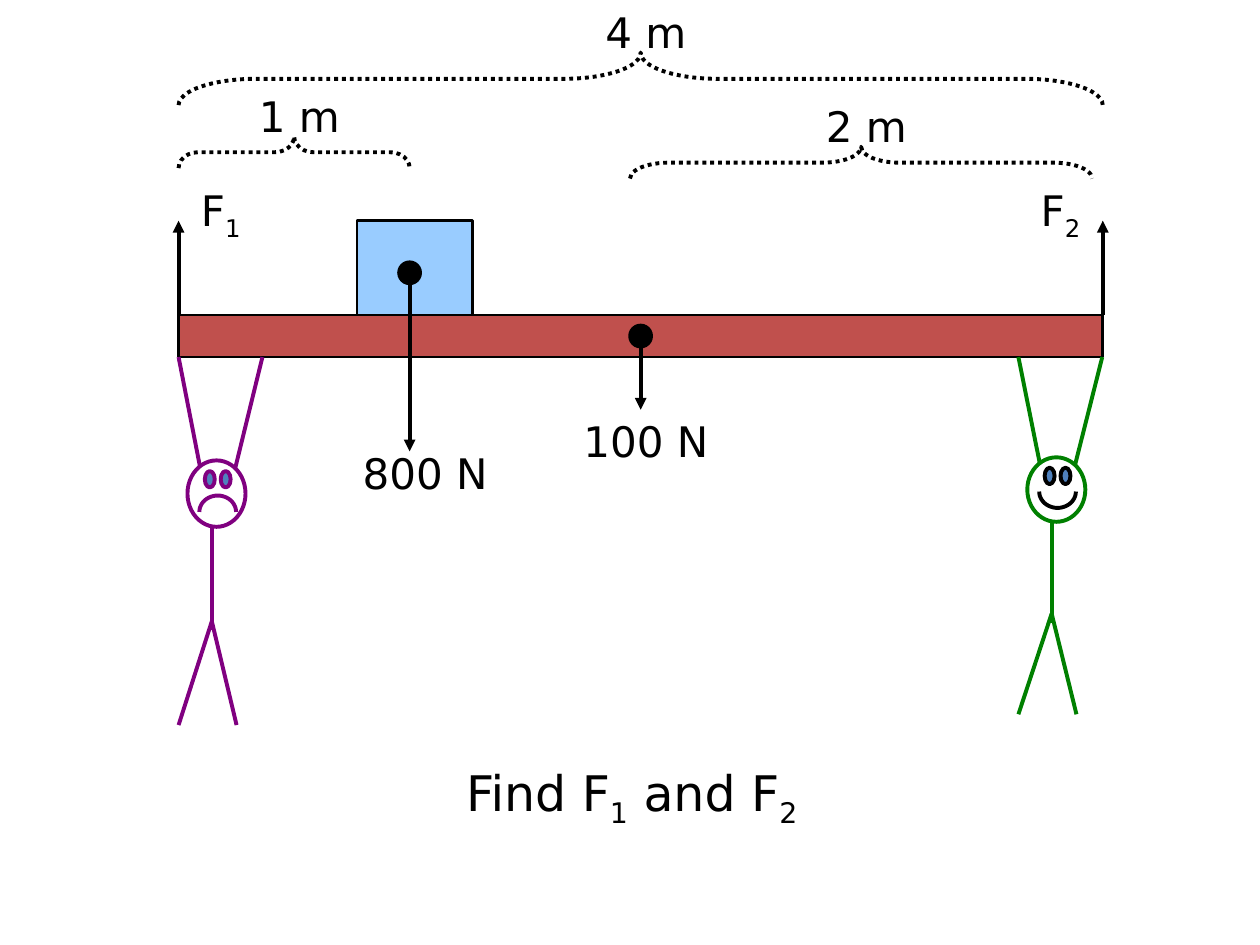
import math
from dataclasses import dataclass

import lxml.etree
import pptx
import pptx.dml.color
import pptx.enum.dml
import pptx.enum.shapes
import pptx.enum.text
import pptx.oxml.ns
import pptx.util

Cm = pptx.util.Cm
Kind = pptx.enum.shapes.MSO_SHAPE
qn = pptx.oxml.ns.qn

COLORS = {
    "black": "000000", "white": "FFFFFF", "beam": "C0504D", "load": "99CCFF",
    "eye": "4F81BD", "sad": "800080", "glad": "008000",
}
FONT = "DejaVu Sans"
LEFT, TOP, SPAN, DEPTH = 3.6, 6.35, 18.63, 0.85
RIGHT, BASE, MID = LEFT + SPAN, TOP + DEPTH, LEFT + SPAN / 2
LOAD_X = LEFT + SPAN / 4


@dataclass
class Label:
    words: tuple
    left: float
    top: float
    width: float
    height: float = 1.27
    size: int = 24


@dataclass
class Brace:
    left: float
    top: float
    span: float
    depth: float


@dataclass
class Arrow:
    x: float
    start: float
    end: float


@dataclass
class Person:
    left: float
    scale: float
    body: str
    face: str
    smile: bool


LABELS = [
    Label(("F", "1"), 1.91, 3.6, 5.08),
    Label(("F", "2"), 18.84, 3.6, 5.08),
    Label(("100 N",), 11.22, 8.26, 3.6),
    Label(("800 N",), 6.77, 8.89, 3.6),
    Label(("4 m",), 9.74, 0, 6.56),
    Label(("1 m",), 3.6, 1.69, 4.87),
    Label(("2 m",), 15.03, 1.91, 4.87),
    Label(("Find F", "1", " and F", "2"), 2.15, 15.24, 21.17, 1.45, 28),
]
BRACES = [
    Brace(LEFT, 1.06, SPAN, 1.06),
    Brace(12.7, 2.96, SPAN / 2, 0.64),
    Brace(LEFT, 2.75, SPAN / 4, 0.64),
]
ARROWS = [
    Arrow(LEFT, TOP, 4.45),
    Arrow(RIGHT, TOP, 4.45),
    Arrow(MID, 6.98, 8.26),
    Arrow(LOAD_X, 5.5, 9.1),
]
PEOPLE = [
    Person(20.53, 1, "glad", "black", True),
    Person(LEFT, 1.03, "sad", "sad", False),
]
LIMBS = [
    ((0, 0), (0.67, 3.33)),
    ((0.85, 3.33), (1.69, 0)),
    ((0.67, 3.33), (0.67, 5.35)),
    ((0.67, 5.17), (0, 7.2)),
    ((0.67, 5.17), (1.17, 7.2)),
]


def rgb(name: str) -> pptx.dml.color.RGBColor:
    return pptx.dml.color.RGBColor.from_string(COLORS[name])


def style(shape, fill: str | None, line: str, width: float = 2.25) -> None:
    shape.shadow.inherit = False
    if fill:
        shape.fill.solid()
        shape.fill.fore_color.rgb = rgb(fill)
    else:
        shape.fill.background()
    shape.line.color.rgb = rgb(line)
    shape.line.width = pptx.util.Pt(width)


def add_form(shapes, kind, left: float, top: float, width: float, height: float,
             fill: str | None, line: str, weight: float = 2.25):
    shape = shapes.add_shape(kind, Cm(left), Cm(top), Cm(width), Cm(height))
    style(shape, fill, line, weight)
    return shape


def add_line(shapes, start: tuple, end: tuple, color: str):
    line = shapes.add_connector(
        pptx.enum.shapes.MSO_CONNECTOR.STRAIGHT, *map(Cm, start + end))
    line.line.color.rgb = rgb(color)
    line.line.width = pptx.util.Pt(2.25)
    lxml.etree.SubElement(line._element.spPr, qn("a:effectLst"))
    return line


def add_arrow(shapes, arrow: Arrow) -> None:
    line = add_line(shapes, (arrow.x, arrow.start), (arrow.x, arrow.end), "black")
    stroke = line._element.spPr.find(qn("a:ln"))
    lxml.etree.SubElement(stroke, qn("a:tailEnd"), type="triangle")


def add_dot(shapes, x: float, y: float) -> None:
    size = 0.42
    add_form(shapes, Kind.OVAL, x - size / 2, y - size / 2, size, size,
             "black", "black")


def add_brace(shapes, brace: Brace) -> None:
    shape = add_form(
        shapes, Kind.LEFT_BRACE,
        brace.left + (brace.span - brace.depth) / 2,
        brace.top + (brace.depth - brace.span) / 2,
        brace.depth, brace.span, None, "black")
    shape.rotation = 90
    shape.adjustments[0] = brace.span / brace.depth / 12
    shape.line.dash_style = pptx.enum.dml.MSO_LINE.ROUND_DOT


def add_label(shapes, label: Label) -> None:
    box = shapes.add_textbox(
        Cm(label.left), Cm(label.top), Cm(label.width), Cm(label.height))
    frame = box.text_frame
    frame.word_wrap = True
    frame.auto_size = pptx.enum.text.MSO_AUTO_SIZE.SHAPE_TO_FIT_TEXT
    para = frame.paragraphs[0]
    para.alignment = pptx.enum.text.PP_ALIGN.CENTER
    para.font.name = FONT
    para.font.size = pptx.util.Pt(label.size)
    para.font.color.rgb = rgb("black")
    for place, word in enumerate(label.words):
        run = para.add_run()
        run.text = word
        if place % 2:
            run._r.get_or_add_rPr().set("baseline", "-25000")


def add_mouth(shapes, x: float, y: float, person: Person) -> None:
    wide, high, steps = 0.37, 0.33, 24
    turns = [math.pi * step / steps for step in range(steps + 1)]
    points = [
        (Cm(x - wide * math.cos(turn)),
         Cm(y + high * (math.sin(turn) if person.smile else 1 - math.sin(turn))))
        for turn in turns
    ]
    pen = shapes.build_freeform(*points[0])
    pen.add_line_segments(points[1:], close=False)
    style(pen.convert_to_shape(), None, person.face)


def add_person(slide, person: Person) -> None:
    shapes = slide.shapes.add_group_shape().shapes

    def spot(x: float, y: float) -> tuple:
        return person.left + x, BASE + y * person.scale

    for start, end in LIMBS:
        add_line(shapes, spot(*start), spot(*end), person.body)
    add_form(shapes, Kind.OVAL, *spot(0.18, 2.02), 1.17, 1.3 * person.scale,
             "white", person.body)
    for x in (0.53, 0.85):
        add_form(shapes, Kind.OVAL, *spot(x, 2.23), 0.2, 0.33, "eye", person.face)
    add_mouth(shapes, *spot(0.79, 2.71), person)


def main() -> None:
    deck = pptx.Presentation()
    deck.slide_width, deck.slide_height = Cm(25.4), Cm(19.05)
    slide = deck.slides.add_slide(deck.slide_layouts[6])
    shapes = slide.shapes
    add_form(shapes, Kind.RECTANGLE, LEFT, TOP, SPAN, DEPTH, "beam", "black", 1.5)
    add_form(shapes, Kind.RECTANGLE, 7.2, 4.45, 2.33, 1.9, "load", "black", 1.5)
    add_dot(shapes, MID, TOP + DEPTH / 2)
    add_dot(shapes, LOAD_X, 5.5)
    for person in PEOPLE:
        add_person(slide, person)
    for arrow in ARROWS:
        add_arrow(shapes, arrow)
    for brace in BRACES:
        add_brace(shapes, brace)
    for label in LABELS:
        add_label(shapes, label)
    deck.save("out.pptx")


if __name__ == "__main__":
    main()
